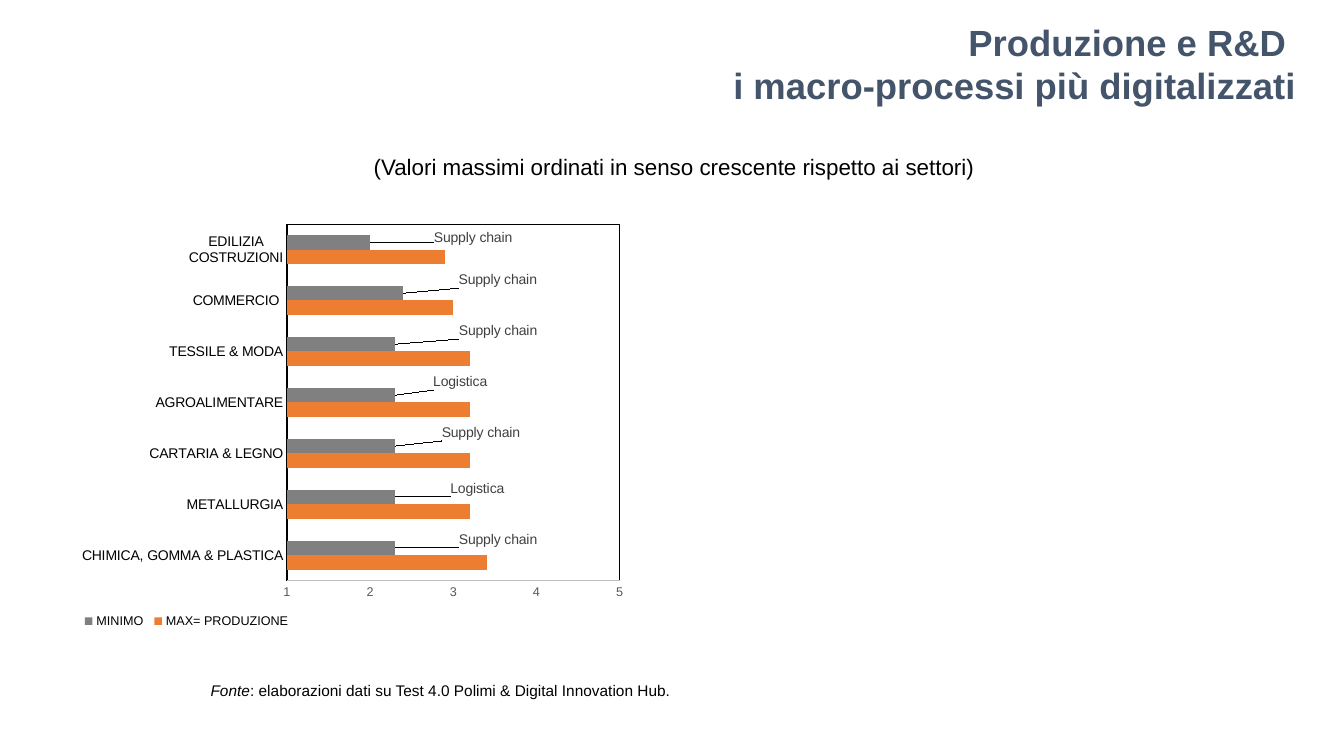
from lxml import etree
from pptx import Presentation
from pptx.chart.data import CategoryChartData
from pptx.dml.color import RGBColor
from pptx.enum.chart import XL_CHART_TYPE, XL_LABEL_POSITION, XL_LEGEND_POSITION, XL_TICK_MARK
from pptx.enum.text import MSO_ANCHOR, PP_ALIGN
from pptx.oxml import parse_xml
from pptx.oxml.ns import nsdecls, qn
from pptx.util import Inches, Pt

BAR = XL_CHART_TYPE.BAR_CLUSTERED
OUTSIDE = XL_LABEL_POSITION.OUTSIDE_END
LEGEND_TOP = XL_LEGEND_POSITION.TOP
NO_TICK = XL_TICK_MARK.NONE
MIDDLE = MSO_ANCHOR.MIDDLE
LEFT, CENTER, RIGHT = PP_ALIGN.LEFT, PP_ALIGN.CENTER, PP_ALIGN.RIGHT

BLACK = RGBColor(0x00, 0x00, 0x00)
WHITE = RGBColor(0xFF, 0xFF, 0xFF)
SLATE = RGBColor(0x44, 0x54, 0x6A)
ORANGE = RGBColor(0xED, 0x7D, 0x31)
GREY = RGBColor(0x80, 0x80, 0x80)
LABEL_GREY = RGBColor(0x40, 0x40, 0x40)
SCALE_GREY = RGBColor(0x59, 0x59, 0x59)
AXIS_GREY = RGBColor(0xBF, 0xBF, 0xBF)

TITLE = [[("Produzione e R&D ", {})], [("i macro-processi più digitalizzati", {})]]
SUBTITLE = [[("(Valori massimi ordinati in senso crescente rispetto ai settori)", {})]]
SOURCE = [[("Fonte", {"italic": True}),
           (": elaborazioni dati su Test 4.0 Polimi & Digital Innovation Hub.", {})]]

SECTORS = [
    ("CHIMICA, GOMMA & PLASTICA", 3.4, 2.3, "Supply chain", (0.105, -0.02)),
    ("METALLURGIA", 3.2, 2.3, "Logistica", (0.09, -0.02)),
    ("CARTARIA & LEGNO", 3.2, 2.3, "Supply chain", (0.075, -0.03)),
    ("AGROALIMENTARE", 3.2, 2.3, "Logistica", (0.06, -0.03)),
    ("TESSILE & MODA", 3.2, 2.3, "Supply chain", (0.105, -0.03)),
    ("COMMERCIO ", 3, 2.4, "Supply chain", (0.09, -0.03)),
    ("EDILIZIA\nCOSTRUZIONI", 2.9, 2, "Supply chain", (0.105, -0.01)),
]
SERIES_COLORS = {"MAX= PRODUZIONE": ORANGE, "MINIMO": GREY}
PLOT_SHARES = {"x": 0.381, "y": 0.031, "w": 0.583, "h": 0.821}
LEGEND_SHARES = {"x": 0.015, "y": 0.92, "w": 0.38, "h": 0.05}


def inches(*lengths):
    return [Inches(length) for length in lengths]


def set_font(font, size, color, **extras):
    for key, value in {"name": "Arial", "size": Pt(size), **extras}.items():
        setattr(font, key, value)
    font.color.rgb = color


def write(frame, paragraphs, align, size, color, **extras):
    frame.word_wrap = True
    for number, runs in enumerate(paragraphs):
        paragraph = frame.add_paragraph() if number else frame.paragraphs[0]
        paragraph.alignment = align
        paragraph.line_spacing = 1.0
        paragraph.space_before = Pt(0)
        for text, style in runs:
            run = paragraph.add_run()
            run.text = text
            set_font(run.font, size, color, **extras, **style)


def manual_layout(shares, inner=False, edge=True):
    layout = parse_xml(f"<c:layout {nsdecls('c')}><c:manualLayout/></c:layout>")
    entries = [("layoutTarget", "inner")] if inner else []
    if edge:
        entries += [("xMode", "edge"), ("yMode", "edge")]
    for tag, value in entries + list(shares.items()):
        etree.SubElement(layout[0], qn(f"c:{tag}")).set("val", str(value))
    return layout


def box_properties(fill, line=None):
    outline = (f'<a:ln w="9525"><a:solidFill><a:srgbClr val="{line}"/></a:solidFill></a:ln>'
               if line else "<a:ln><a:noFill/></a:ln>")
    return parse_xml(f"<c:spPr {nsdecls('c', 'a')}><a:solidFill>"
                     f'<a:srgbClr val="{fill}"/></a:solidFill>{outline}</c:spPr>')


def add_sector_chart(slide):
    names, highs, lows, processes, shifts = zip(*SECTORS)
    data = CategoryChartData(number_format="0.0")
    data.categories = names
    for name, values in zip(SERIES_COLORS, (highs, lows)):
        data.add_series(name, values)
    chart = slide.shapes.add_chart(BAR, *inches(0.69, 2.09, 5.66, 4.31), data).chart
    chart.has_title = False
    set_font(chart.font, 10, BLACK)

    plot = chart.plots[0]
    for key, value in {"gap_width": 150, "overlap": 0, "vary_by_categories": False}.items():
        setattr(plot, key, value)
    for series in plot.series:
        series.format.fill.solid()
        series.format.fill.fore_color.rgb = SERIES_COLORS[series.name]

    minimum = plot.series[1]
    for index, (process, (dx, dy)) in enumerate(zip(processes, shifts)):
        label = minimum.points[index].data_label
        run = label.text_frame.paragraphs[0].add_run()
        run.text = process
        set_font(run.font, 10, LABEL_GREY)
        label.position = OUTSIDE
    for entry, (dx, dy) in zip(minimum.data_labels._element.findall(qn("c:dLbl")), shifts):
        entry.find(qn("c:idx")).addnext(manual_layout({"x": dx, "y": dy}, edge=False))

    axes = [(chart.category_axis, 10, BLACK, BLACK),
            (chart.value_axis, 9, SCALE_GREY, AXIS_GREY)]
    for axis, size, color, line in axes:
        for key, value in {"major_tick_mark": NO_TICK, "minor_tick_mark": NO_TICK,
                           "has_major_gridlines": False}.items():
            setattr(axis, key, value)
        set_font(axis.tick_labels.font, size, color)
        axis.format.line.color.rgb = line
        axis.format.line.width = Pt(0.75)
    scale = chart.value_axis
    for key, value in {"minimum_scale": 1, "maximum_scale": 5, "major_unit": 1}.items():
        setattr(scale, key, value)
    scale.tick_labels.number_format = "0"
    scale.tick_labels.number_format_is_linked = False

    chart.has_legend = True
    legend = chart.legend
    legend.position = LEGEND_TOP
    legend.include_in_layout = False
    set_font(legend.font, 9, BLACK)
    for old in legend._element.findall(qn("c:layout")):
        legend._element.remove(old)
    legend._element.find(qn("c:legendPos")).addnext(manual_layout(LEGEND_SHARES))

    plot_area = chart._chartSpace.chart.plotArea
    for old in plot_area.findall(qn("c:layout")):
        plot_area.remove(old)
    plot_area.insert(0, manual_layout(PLOT_SHARES, inner=True))
    plot_area.append(box_properties(WHITE, BLACK))
    chart._chartSpace.chart.addnext(box_properties(WHITE))


def main():
    deck = Presentation()
    deck.slide_width, deck.slide_height = inches(13.33, 7.5)
    slide = deck.slides.add_slide(deck.slide_layouts[5])

    title = slide.shapes.title
    title.left, title.top, title.width, title.height = inches(0.39, 0.14, 12.57, 0.98)
    title.text_frame.vertical_anchor = MIDDLE
    write(title.text_frame, TITLE, RIGHT, 26, SLATE, bold=True)

    notes = [(SUBTITLE, (1.48, 1.47, 10.41, 0.37), CENTER, 16),
             (SOURCE, (1.99, 6.71, 5.38, 0.29), LEFT, 11)]
    for paragraphs, place, align, size in notes:
        box = slide.shapes.add_textbox(*inches(*place))
        write(box.text_frame, paragraphs, align, size, BLACK)

    add_sector_chart(slide)
    deck.save("out.pptx")


if __name__ == "__main__":
    main()
